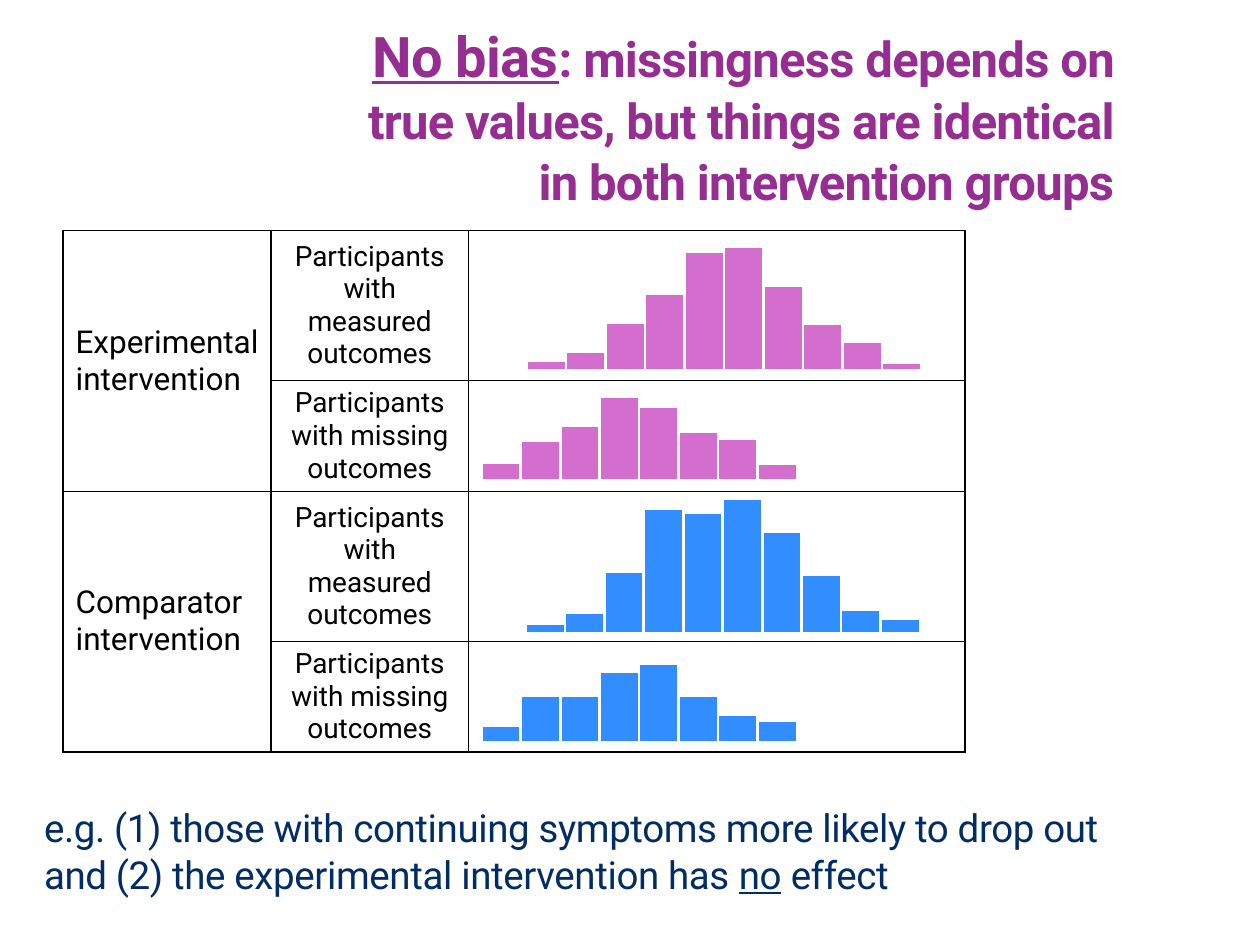
from lxml import etree
from pptx import Presentation
from pptx.dml.color import RGBColor
from pptx.enum.shapes import MSO_SHAPE
from pptx.enum.text import MSO_ANCHOR, MSO_AUTO_SIZE, PP_ALIGN
from pptx.oxml.ns import qn
from pptx.util import Inches, Pt

RECT = MSO_SHAPE.RECTANGLE
TOP, MIDDLE = MSO_ANCHOR.TOP, MSO_ANCHOR.MIDDLE
LEFT, CENTER, RIGHT = PP_ALIGN.LEFT, PP_ALIGN.CENTER, PP_ALIGN.RIGHT
HUES = {"title": "962D91", "body": "002D64", "ink": "000000",
        "exp": "D36ECF", "comp": "328EFF", "gap": "FFFFFF"}
FONT = "Roboto"

# Table grid, in inches
COLS = [1.65, 1.57, 3.94]
ROWS = [1.19, 0.88, 1.19, 0.88]
ARMS = ["Experimental intervention", "Comparator intervention"]
KINDS = ["Participants with measured outcomes",
         "Participants with missing outcomes"]

# Histograms: row, colour, left and lift inside the row, bar heights
STEP = 0.3133
PLOTS = [
    (0, "exp", 0.46, 0.08,
     [0.08, 0.15, 0.38, 0.61, 0.94, 0.98, 0.67, 0.37, 0.23, 0.06]),
    (2, "comp", 0.45, 0.06,
     [0.08, 0.17, 0.49, 0.99, 0.96, 1.07, 0.81, 0.47, 0.19, 0.12]),
    (1, "exp", 0.1, 0.09,
     [0.14, 0.31, 0.43, 0.66, 0.58, 0.38, 0.33, 0.13]),
    (3, "comp", 0.1, 0.08,
     [0.13, 0.37, 0.37, 0.56, 0.62, 0.37, 0.22, 0.17]),
]


def color(name):
    return RGBColor.from_string(HUES[name])


def write(frame, runs, hue="ink", align=LEFT, space=None, track=0):
    """Fill one paragraph; each run is (text, size, bold, underline)."""
    para = frame.paragraphs[0]
    para.alignment = align
    if space:
        para.line_spacing = space
    for text, size, bold, under in runs:
        for i, part in enumerate(text.split("\n")):
            if i:
                para.add_line_break()
            run = para.add_run()
            run.text = part
            font = run.font
            font.name, font.size = FONT, Pt(size)
            font.bold, font.underline = bold, under
            font.color.rgb = color(hue)
            if track:
                font._element.set("spc", str(track))
    return para


def place(shape, box, anchor):
    shape.left, shape.top, shape.width, shape.height = map(Inches, box)
    frame = shape.text_frame
    frame.word_wrap = True
    frame.auto_size = MSO_AUTO_SIZE.NONE
    frame.vertical_anchor = anchor
    return frame


def add_title(slide, box):
    frame = place(slide.shapes.title, box, MIDDLE)
    write(frame, [("No bias", 32, True, True),
                  (": missingness depends on true values, but things are "
                   "identical in both intervention groups", 28, True, False)],
          hue="title", align=RIGHT, space=1.04, track=-40)


def add_note(slide, box):
    frame = place(slide.placeholders[1], box, TOP)
    props = frame.paragraphs[0]._p.get_or_add_pPr()
    props.set("marL", "0")
    props.set("indent", "0")
    etree.SubElement(props, qn("a:buNone"))
    para = write(frame, [
        ("e.g. (1) those with continuing symptoms more likely to drop out\n"
         "and (2) the experimental intervention has ", 22, False, False),
        ("no", 22, False, True), (" effect", 22, False, False)],
        hue="body", space=1.02, track=-20)
    para.space_before = Pt(0)


def rule(cell):
    """Draw thin borders on all four sides."""
    props = cell._tc.get_or_add_tcPr()
    for side in ("lnL", "lnR", "lnT", "lnB"):
        line = etree.SubElement(props, qn("a:" + side), w=str(Pt(1)))
        fill = etree.SubElement(line, qn("a:solidFill"))
        etree.SubElement(fill, qn("a:srgbClr"), val=HUES["ink"])


def add_grid(slide, left, top):
    table = slide.shapes.add_table(
        len(ROWS), len(COLS), Inches(left), Inches(top),
        Inches(sum(COLS)), Inches(sum(ROWS))).table
    table.first_row = table.horz_banding = False
    for col, width in zip(table.columns, COLS):
        col.width = Inches(width)
    for row, height in zip(table.rows, ROWS):
        row.height = Inches(height)
    for cell in table.iter_cells():
        rule(cell)
        cell.fill.background()
        cell.vertical_anchor = MIDDLE
    for r in range(len(ROWS)):
        write(table.cell(r, 1).text_frame,
              [(KINDS[r % 2], 16, False, False)], align=CENTER)
    for i, arm in enumerate(ARMS):
        cell = table.cell(2 * i, 0)
        cell.merge(table.cell(2 * i + 1, 0))
        cell.margin_right = Inches(0.05)
        write(cell.text_frame, [(arm, 18, False, False)])


def add_bars(slide, left, base, hue, bars):
    """Stand a row of touching bars on one base line."""
    group = slide.shapes.add_group_shape()
    for i, high in enumerate(bars):
        bar = group.shapes.add_shape(
            RECT, Inches(left + i * STEP), Inches(base - high),
            Inches(STEP), Inches(high))
        bar.shadow.inherit = False
        bar.fill.solid()
        bar.fill.fore_color.rgb = color(hue)
        bar.line.color.rgb = color("gap")
        bar.line.width = Pt(1.5)


def main():
    deck = Presentation()
    deck.slide_width, deck.slide_height = Inches(10), Inches(7.5)
    slide = deck.slides.add_slide(deck.slide_layouts[1])

    # Table with a histogram in each row
    left, top = 0.5, 1.83
    add_grid(slide, left, top)
    for row, hue, shift, lift, bars in PLOTS:
        base = top + sum(ROWS[:row + 1]) - lift
        add_bars(slide, left + sum(COLS[:2]) + shift, base, hue, bars)

    # Heading and example
    add_title(slide, (2.45, 0.31, 6.49, 1.2))
    add_note(slide, (0.25, 6.32, 9.01, 0.87))
    deck.save("out.pptx")


if __name__ == "__main__":
    main()
